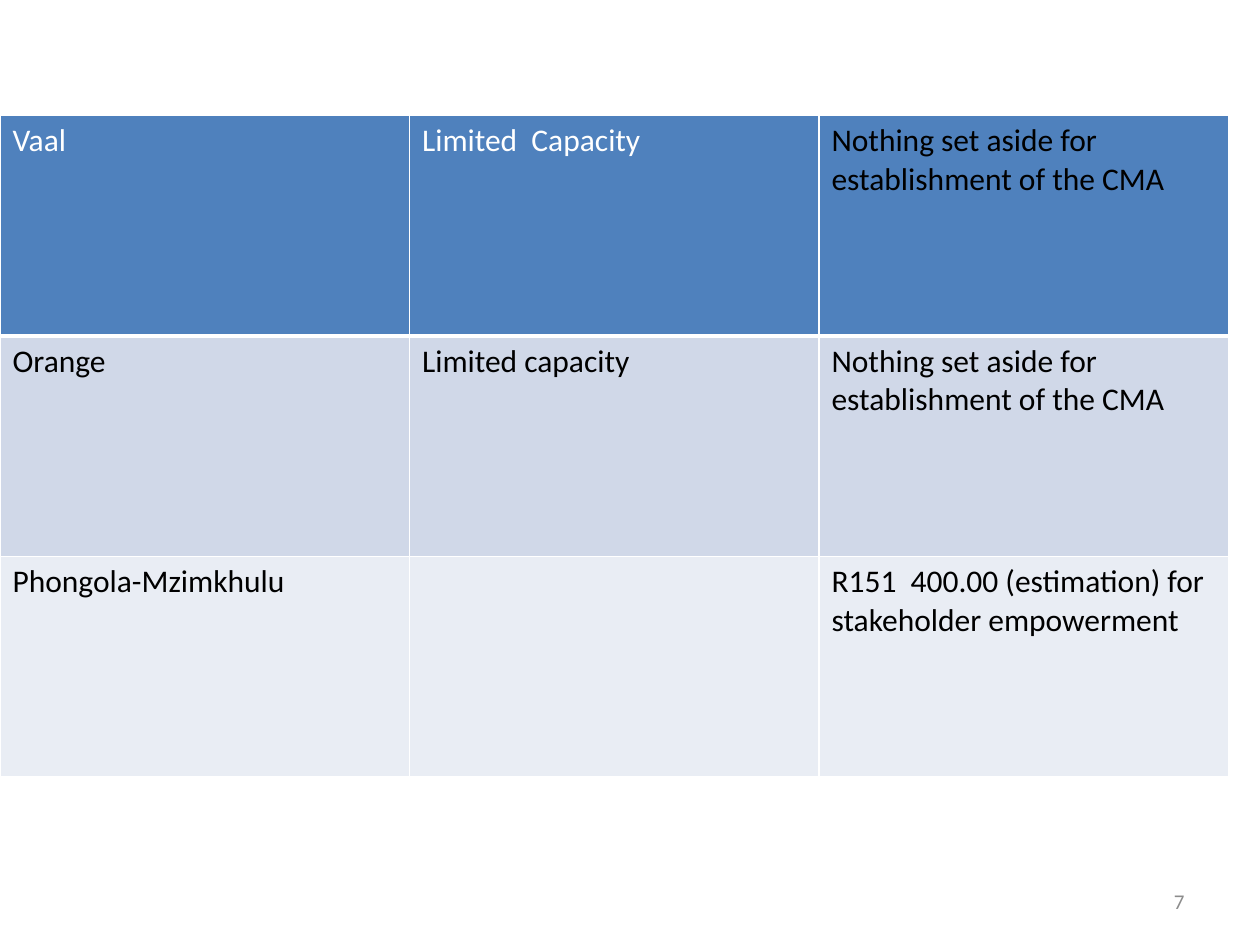
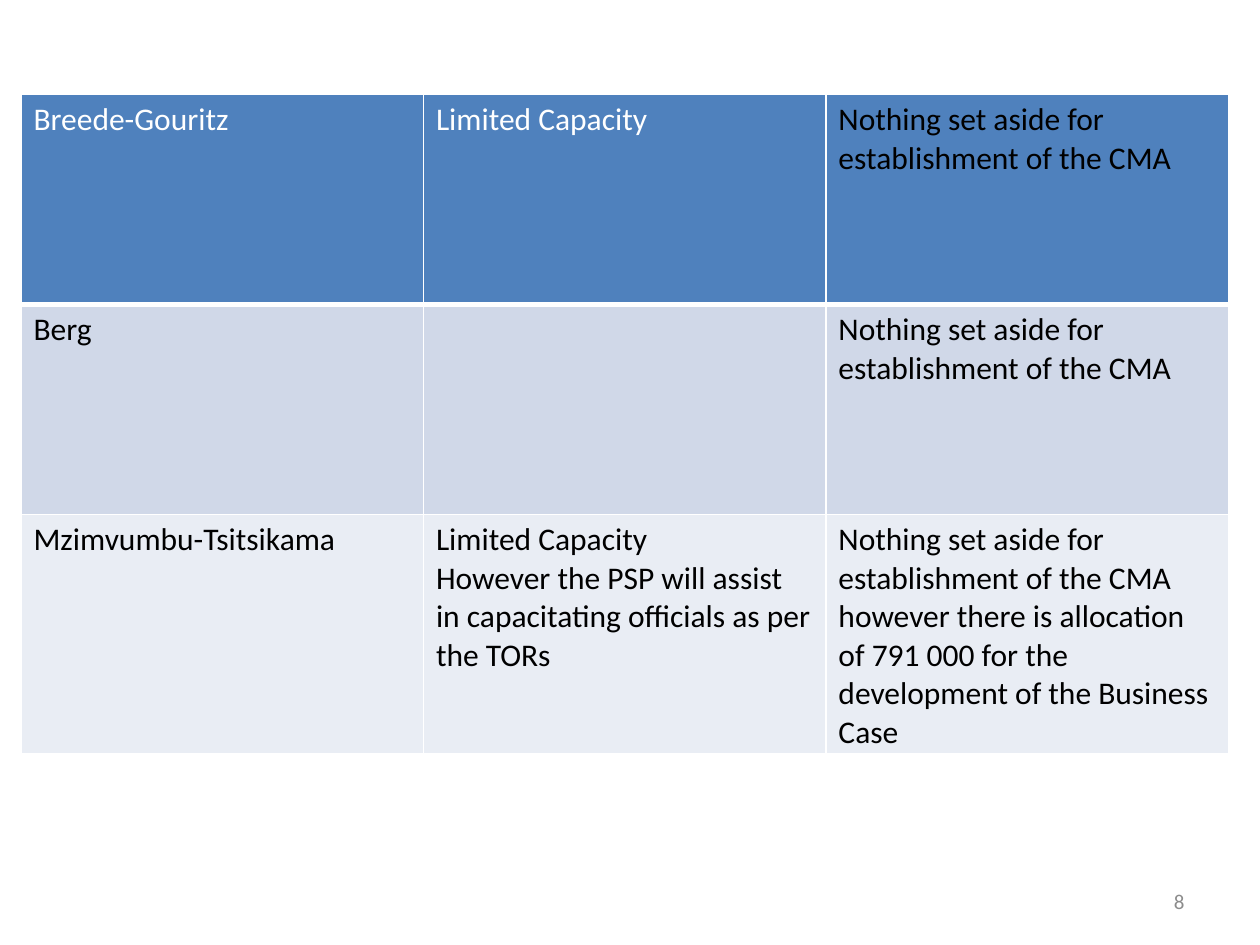
from dataclasses import dataclass
from lxml.etree import SubElement
from pptx import Presentation
from pptx.dml.color import RGBColor
from pptx.enum.text import MSO_ANCHOR, PP_ALIGN
from pptx.oxml.ns import qn
from pptx.util import Pt


@dataclass(frozen=True)
class Theme:
    font: str = "Calibri"
    body: int = 18
    small: int = 12
    white: str = "FFFFFF"
    black: str = "000000"
    grey: str = "8C8C8C"
    fills: tuple = ("4F81BD", "D0D8E8", "E9EDF4")
    thin: int = 1
    thick: int = 3


theme = Theme()


def write(frame, text, size=theme.body, color=theme.black, align=PP_ALIGN.LEFT):
    frame.word_wrap = True
    frame.text = text
    for para in frame.paragraphs:
        para.alignment = align
        for run in para.runs:
            run.font.name = theme.font
            run.font.size = Pt(size)
            run.font.color.rgb = RGBColor.from_string(color)


def edge(cell, side, width):
    props = cell._tc.get_or_add_tcPr()
    line = SubElement(props, qn(f"a:ln{side}"), w=str(Pt(width)))
    fill = SubElement(line, qn("a:solidFill"))
    SubElement(fill, qn("a:srgbClr"), val=theme.white)


unfunded = "Nothing set aside for establishment of the CMA"
pages = [
    dict(number=7, left=0, top=66, width=234, height=126, total=378, rows=[
        ["Vaal", "Limited  Capacity", unfunded],
        ["Orange", "Limited capacity", unfunded],
        ["Phongola-Mzimkhulu", "",
         "R151  400.00 (estimation) for stakeholder empowerment"],
    ]),
    dict(number=8, left=12, top=54, width=230, height=120, total=376.5, rows=[
        ["Breede-Gouritz", "Limited Capacity", unfunded],
        ["Berg", "", unfunded],
        ["Mzimvumbu-Tsitsikama",
         "Limited Capacity\nHowever the PSP will assist in capacitating "
         "officials as per the TORs",
         unfunded + " however there is allocation of 791 000 for the "
         "development of the Business Case"],
    ]),
]

deck = Presentation()
deck.slide_width = Pt(720)
deck.slide_height = Pt(540)

for page in pages:
    slide = deck.slides.add_slide(deck.slide_layouts[6])

    foot = slide.shapes.add_textbox(Pt(516), Pt(500.5), Pt(168), Pt(28.75)).text_frame
    foot.vertical_anchor = MSO_ANCHOR.MIDDLE
    write(foot, str(page["number"]), size=theme.small, color=theme.grey,
          align=PP_ALIGN.RIGHT)

    rows = page["rows"]
    shape = slide.shapes.add_table(
        len(rows), len(rows[0]), Pt(page["left"]), Pt(page["top"]),
        Pt(page["width"] * len(rows[0])), Pt(page["total"]))
    table = shape.table
    for col in table.columns:
        col.width = Pt(page["width"])
    for row in table.rows:
        row.height = Pt(page["height"])
    shape.height = Pt(page["total"])

    for i, texts in enumerate(rows):
        for j, text in enumerate(texts):
            cell = table.cell(i, j)
            edge(cell, "L", theme.thin)
            edge(cell, "R", theme.thin)
            edge(cell, "T", theme.thick if i == 1 else theme.thin)
            edge(cell, "B", theme.thick if i == 0 else theme.thin)
            cell.fill.solid()
            cell.fill.fore_color.rgb = RGBColor.from_string(theme.fills[i])
            light = i == 0 and j < 2
            write(cell.text_frame, text, color=theme.white if light else theme.black)
            if i == 0:
                for para in cell.text_frame.paragraphs:
                    for run in para.runs:
                        run.font.bold = False

deck.save("out.pptx")
